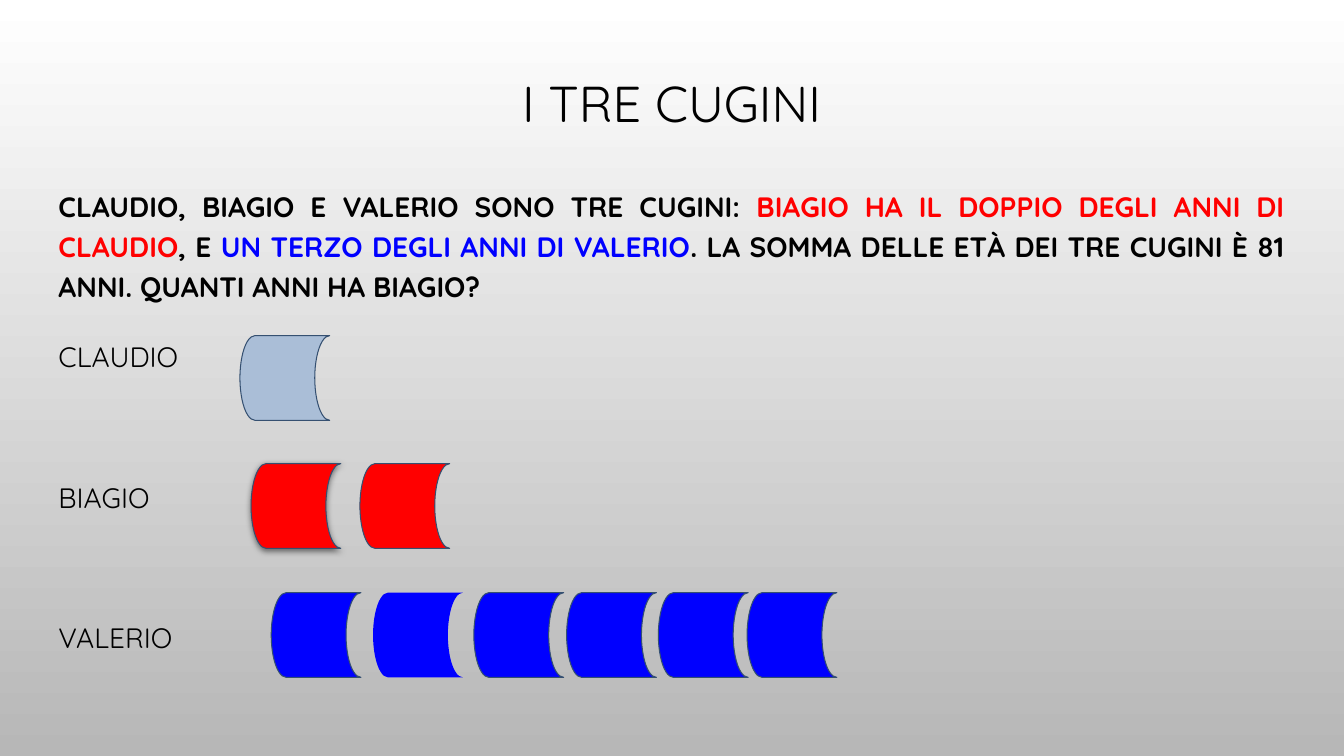
from dataclasses import dataclass

from lxml import etree
from pptx import Presentation
from pptx import util as u
from pptx.dml.color import RGBColor
from pptx.enum import shapes, text
from pptx.oxml.ns import qn

PX = 9144


@dataclass(frozen=True)
class Theme:
    """Colours, font and type sizes of the slide."""
    font: str = "Quicksand"
    title: int = 36
    body: int = 20
    ink: str = "000000"
    claudio: str = "AABED7"
    biagio: str = "FF0000"
    valerio: str = "0000FF"
    outline: str = "355071"
    bg_top: str = "FFFFFF"
    bg_bottom: str = "B7B7B7"


T = Theme()


def rgb(value):
    """Return a colour from its hex value."""
    return RGBColor.from_string(value)


def emu(*lengths):
    """Turn px lengths into EMU."""
    return [u.Emu(n * PX) for n in lengths]


def add_run(p, words, size=T.body, color=T.ink, bold=False):
    """Add formatted text to a paragraph."""
    r = p.add_run()
    r.text = words
    r.font.name, r.font.size, r.font.bold = T.font, u.Pt(size), bold
    r.font.color.rgb = rgb(color)


def set_frame(tf):
    """Wrap a text frame, anchor it at the top and set its insets."""
    tf.word_wrap = True
    tf.auto_size = text.MSO_AUTO_SIZE.NONE
    tf.vertical_anchor = text.MSO_ANCHOR.TOP
    tf.margin_left = tf.margin_right = tf.margin_top = tf.margin_bottom = 13 * PX


def set_background(s):
    """Fill the slide with a vertical gradient."""
    fill = s.background.fill
    fill.gradient()
    fill.gradient_angle = 270
    for stop, position, color in zip(fill.gradient_stops, (0, 1), (T.bg_top, T.bg_bottom)):
        stop.position = position
        stop.color.rgb = rgb(color)


def place_title(s, box, words):
    """Place the centred title in its box."""
    sp = s.shapes.title
    sp.left, sp.top, sp.width, sp.height = emu(*box)
    set_frame(sp.text_frame)
    p = sp.text_frame.paragraphs[0]
    p.alignment, p.line_spacing = text.PP_ALIGN.CENTER, 0.9
    add_run(p, words, size=T.title)


def place_problem(s, box, parts, names):
    """Write the problem and, below it, the label of each cousin."""
    tf = s.shapes.add_textbox(*emu(*box)).text_frame
    set_frame(tf)
    p = tf.paragraphs[0]
    p.alignment, p.line_spacing = text.PP_ALIGN.JUSTIFY, 1.2
    for words, color in parts:
        add_run(p, words, color=color, bold=True)
    for i, name in enumerate(names):
        p = tf.add_paragraph()
        p.alignment, p.line_spacing = text.PP_ALIGN.LEFT, 1.2
        p.space_before = u.Pt(71.4 if i else 21.3)
        add_run(p, name)


def add_shadow(sp):
    """Give a shape a soft shadow below it."""
    effects = sp._element.spPr.find(qn("a:effectLst"))
    shadow = etree.SubElement(effects, qn("a:outerShdw"), blurRad=str(u.Pt(4.5)),
                              dist=str(u.Pt(1.5)), dir="5400000", rotWithShape="0")
    color = etree.SubElement(shadow, qn("a:srgbClr"), val=T.ink)
    etree.SubElement(color, qn("a:alpha"), val="50000")


def add_unit(s, box, color, outlined=True, shadow=False):
    """Add one unit of age."""
    sp = s.shapes.add_shape(shapes.MSO_SHAPE.FLOWCHART_STORED_DATA, *emu(*box))
    sp.shadow.inherit = False
    sp.fill.solid()
    sp.fill.fore_color.rgb = rgb(color)
    if outlined:
        sp.line.color.rgb = rgb(T.outline)
        sp.line.width = u.Pt(0.75)
    else:
        sp.line.fill.background()
    if shadow:
        add_shadow(sp)


def place_units(s, box, rows):
    """Place a row of units for each cousin, evenly spaced down the box."""
    left, top, width, height = box
    unit_w, unit_h = 89, 84
    pitch = (height - unit_h) / (len(rows) - 1)
    for i, (color, units) in enumerate(rows):
        for offset, style in units:
            add_unit(s, (left + offset, round(top + i * pitch), unit_w, unit_h), color, **style)


def build_problem_slide(prs):
    """Build the slide with the problem of the three cousins."""
    s = prs.slides.add_slide(prs.slide_layouts[5])
    set_background(s)
    place_title(s, (45, 65, 1242, 84), "I TRE CUGINI")
    place_problem(s, (45, 168, 1242, 559), [
        ("CLAUDIO, BIAGIO E VALERIO SONO TRE CUGINI: ", T.ink),
        ("BIAGIO HA IL DOPPIO DEGLI ANNI DI CLAUDIO", T.biagio),
        (", E", T.ink),
        (" UN TERZO DEGLI ANNI DI VALERIO", T.valerio),
        (". LA SOMMA DELLE ETÀ DEI TRE CUGINI È 81 ANNI. QUANTI ANNI HA BIAGIO?", T.ink),
    ], ["CLAUDIO", "BIAGIO", "VALERIO"])
    place_units(s, (238, 333, 592, 339), [
        (T.claudio, [(0, {})]),
        (T.biagio, [(11, {"shadow": True}), (119, {})]),
        (T.valerio, [(31, {}), (132, {"outlined": False}), (232, {}),
                     (324, {}), (415, {}), (503, {})]),
    ])


def main():
    """Build and save the presentation."""
    prs = Presentation()
    prs.slide_width, prs.slide_height = emu(1333, 750)
    build_problem_slide(prs)
    prs.save("out.pptx")


if __name__ == "__main__":
    main()
